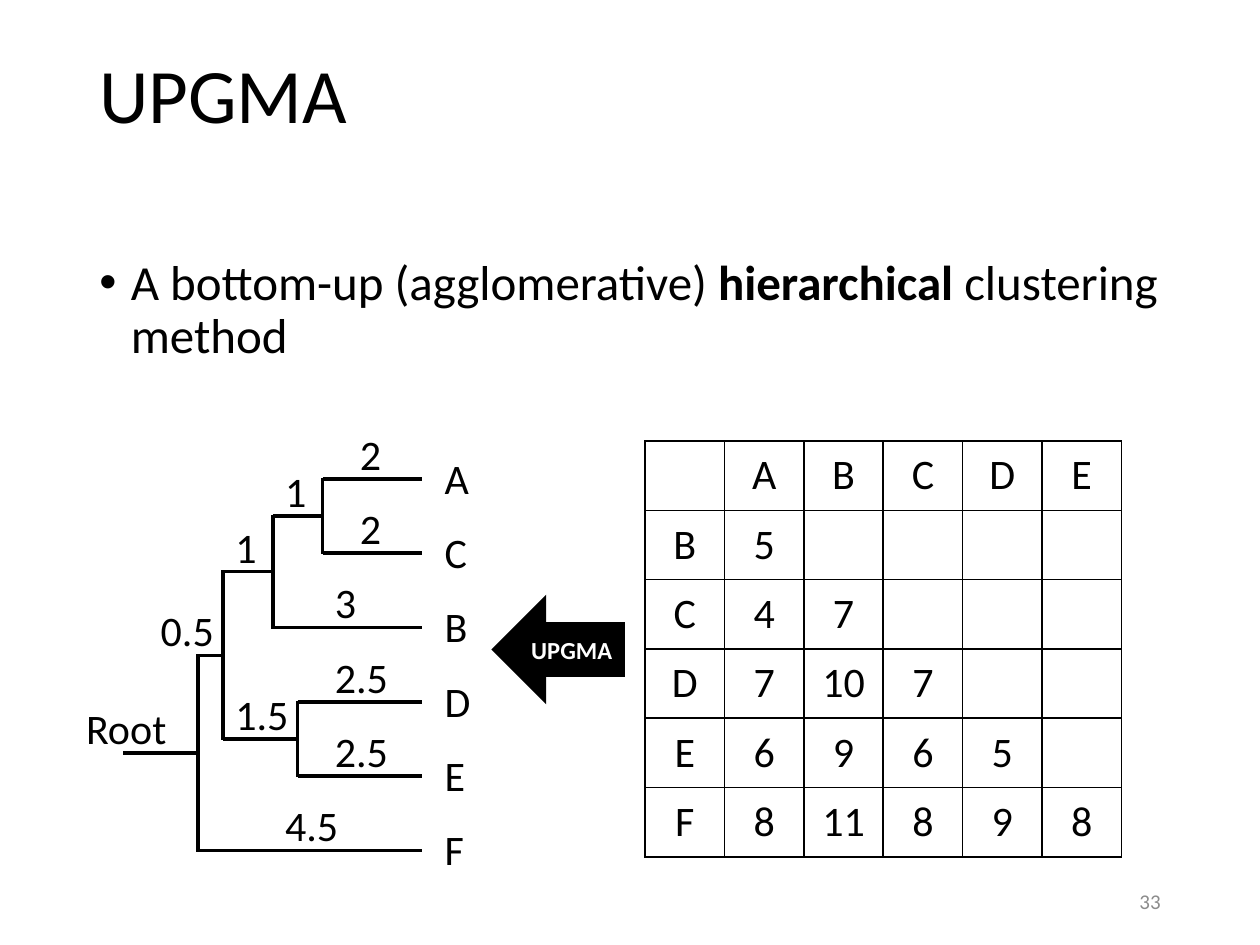
from lxml import etree
from pptx import Presentation
from pptx.dml.color import RGBColor
from pptx.enum.shapes import MSO_CONNECTOR, MSO_SHAPE
from pptx.enum.text import MSO_ANCHOR, MSO_AUTO_SIZE, PP_ALIGN
from pptx.oxml import parse_xml
from pptx.oxml.ns import qn
from pptx.util import Inches, Pt

STRAIGHT = MSO_CONNECTOR.STRAIGHT
LEFT_ARROW = MSO_SHAPE.LEFT_ARROW
TOP, MIDDLE = MSO_ANCHOR.TOP, MSO_ANCHOR.MIDDLE
LEFT, CENTER, RIGHT = PP_ALIGN.LEFT, PP_ALIGN.CENTER, PP_ALIGN.RIGHT
FIT_SHAPE = MSO_AUTO_SIZE.SHAPE_TO_FIT_TEXT
BLACK = "000000"
DRAWING = "http://schemas.openxmlformats.org/drawingml/2006/main"


def write(frame, text, size, color=BLACK, align=LEFT, anchor=TOP):
    frame.vertical_anchor = anchor
    paragraph = frame.paragraphs[0]
    paragraph.alignment = align
    paragraph.font.size = Pt(size)
    paragraph.font.name = "Calibri"
    paragraph.font.color.rgb = RGBColor.from_string(color)
    paragraph.add_run().text = text
    return paragraph


def draw_line(shapes, x1, y1, x2, y2):
    line = shapes.add_connector(STRAIGHT, Inches(x1), Inches(y1), Inches(x2), Inches(y2))
    line.line.color.rgb = RGBColor.from_string(BLACK)
    line.line.width = Pt(2)
    etree.SubElement(line._element.spPr, qn("a:effectLst"))


presentation = Presentation()
presentation.slide_width = Inches(10)
presentation.slide_height = Inches(7.5)
slide = presentation.slides.add_slide(presentation.slide_layouts[6])

body = slide.shapes.add_textbox(Inches(0.69), Inches(2), Inches(8.62), Inches(4.76))
body.text_frame.word_wrap = True
paragraph = write(body.text_frame, "A bottom-up (agglomerative) ", 28)
run = paragraph.add_run()
run.text = "hierarchical "
run.font.bold = True
paragraph.add_run().text = "clustering method"
paragraph.line_spacing = 0.9
paragraph.space_before = Pt(10)
properties = paragraph._p.get_or_add_pPr()
properties.set("marL", str(Inches(0.25)))
properties.set("indent", str(Inches(-0.25)))
bullet_font = etree.Element(qn("a:buFont"), typeface="Arial")
bullet = etree.Element(qn("a:buChar"), char="•")
properties.find(qn("a:defRPr")).addprevious(bullet_font)
bullet_font.addnext(bullet)

title = slide.shapes.add_textbox(Inches(0.69), Inches(0.4), Inches(8.62), Inches(1.45))
title.text_frame.word_wrap = True
write(title.text_frame, "UPGMA", 44).line_spacing = 0.9

number = slide.shapes.add_textbox(Inches(7.06), Inches(6.95), Inches(2.25), Inches(0.4))
number.text_frame.word_wrap = True
write(number.text_frame, "33", 12, "8C8C8C", RIGHT, MIDDLE)

distances = [
    ["", "A", "B", "C", "D", "E"],
    ["B", "5"],
    ["C", "4", "7"],
    ["D", "7", "10", "7"],
    ["E", "6", "9", "6", "5"],
    ["F", "8", "11", "8", "9", "8"],
]
table = slide.shapes.add_table(6, 6, Inches(5.12), Inches(3.5), Inches(3.78), Inches(3.3)).table
table.first_row = False
table.horz_banding = False
for column in table.columns:
    column.width = Inches(0.63)
for row in table.rows:
    row.height = Inches(0.55)
for row_index in range(6):
    for column_index in range(6):
        cell = table.cell(row_index, column_index)
        values = distances[row_index]
        if column_index < len(values) and values[column_index]:
            write(cell.text_frame, values[column_index], 24, BLACK, CENTER)
        cell.vertical_anchor = MIDDLE
        cell.margin_left = cell.margin_right = Inches(0.05)
        cell.fill.background()
        cell_properties = cell._tc.get_or_add_tcPr()
        for position, side in enumerate(("lnL", "lnR", "lnT", "lnB")):
            border = parse_xml(
                f'<a:{side} xmlns:a="{DRAWING}" w="12700"><a:solidFill>'
                f'<a:srgbClr val="{BLACK}"/></a:solidFill></a:{side}>'
            )
            cell_properties.insert(position, border)

tip_x, unit = 3.35, 0.395
first_y, row_gap = 3.8, 0.59
label_widths = {1: 0.37, 3: 0.63, 4: 0.84}
tree = slide.shapes.add_group_shape().shapes
labels = [(name, 3.43, first_y + index * row_gap - 0.26) for index, name in enumerate("ACBDEF")]

# label, start height, end height, row, label height
branches = [
    ("Root", 6, 4.5, 3.6875, 7),
    ("4.5", 4.5, 0, 5, 3),
    ("0.5", 4.5, 4, 2.375, 5.5),
    ("1.5", 4, 2.5, 3.5, 4),
    ("1", 4, 3, 1.25, 4),
    ("3", 3, 0, 2, 2),
    ("1", 3, 2, 0.5, 3),
    ("2", 2, 0, 0, 1.5),
    ("2", 2, 0, 1, 1.5),
    ("2.5", 2.5, 0, 3, 2),
    ("2.5", 2.5, 0, 4, 2),
]
for label, start, end, row, label_height in branches:
    y = first_y + row * row_gap
    draw_line(tree, tip_x - start * unit, y, tip_x - end * unit, y)
    labels.append((label, tip_x - label_height * unit, y - 0.45))

for height, top_row, bottom_row in [(4.5, 2.375, 5), (4, 1.25, 3.5), (3, 0.5, 2), (2, 0, 1), (2.5, 3, 4)]:
    x = tip_x - height * unit
    draw_line(tree, x, first_y + top_row * row_gap - 0.01, x, first_y + bottom_row * row_gap + 0.01)

for text, x, y in labels:
    width = 0.39 if text in "ABCDEF" else label_widths[len(text)]
    box = tree.add_textbox(Inches(x), Inches(y), Inches(width), Inches(0.5))
    box.text_frame.word_wrap = False
    box.text_frame.auto_size = FIT_SHAPE
    write(box.text_frame, text, 24)

arrow = slide.shapes.add_shape(LEFT_ARROW, Inches(3.9), Inches(4.72), Inches(1.06), Inches(0.87))
arrow.shadow.inherit = False
arrow.fill.solid()
arrow.fill.fore_color.rgb = RGBColor.from_string(BLACK)
arrow.line.fill.background()
write(arrow.text_frame, "UPGMA", 14, "FFFFFF", CENTER, MIDDLE).font.bold = True

presentation.save("out.pptx")
